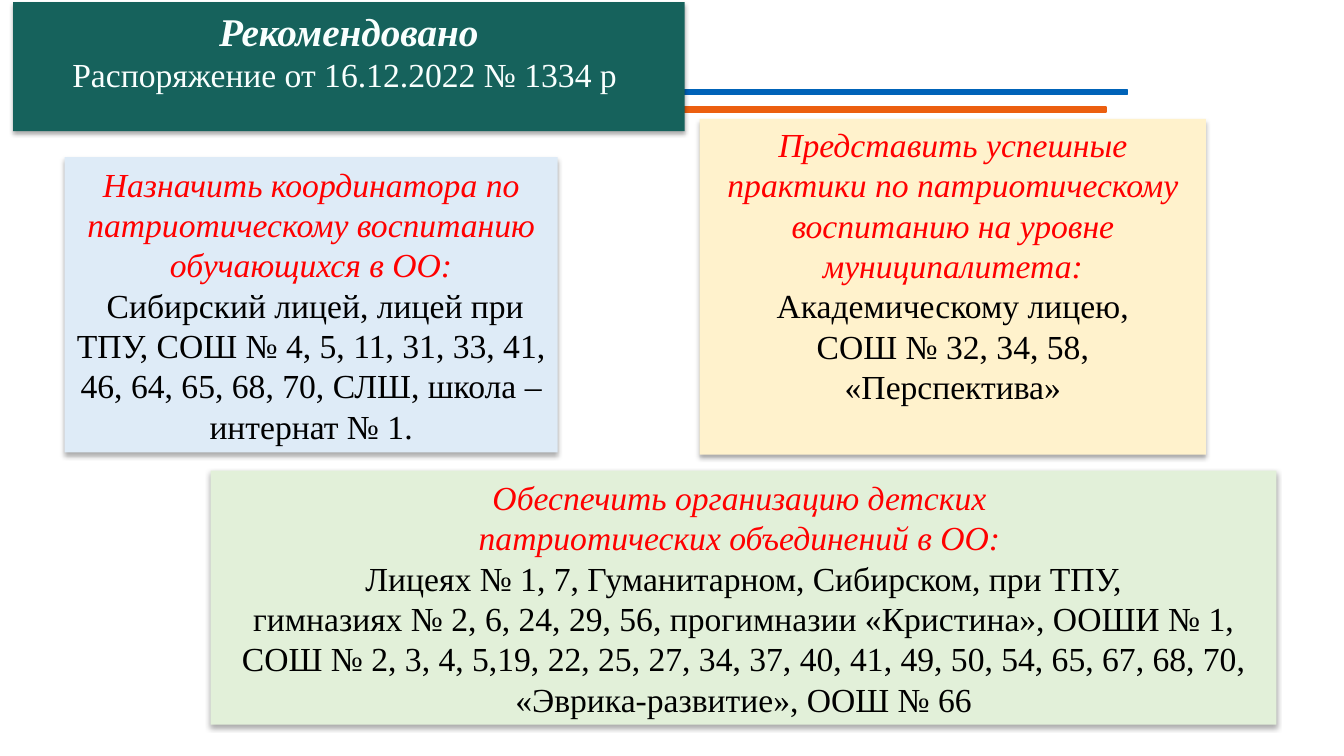
from lxml import etree
from pptx import Presentation
from pptx.dml.color import RGBColor
from pptx.enum.shapes import MSO_SHAPE
from pptx.enum.text import MSO_ANCHOR, PP_ALIGN
from pptx.oxml.ns import qn
from pptx.util import Inches, Pt

COLORS = {
    "teal": "16625C", "mint": "F9FFFE", "blue": "0063B8", "orange": "EC5F0F",
    "pale blue": "DEEBF7", "cream": "FFF2CC", "pale green": "E2F0D9",
    "red": "FF0000", "black": "000000",
}


def color(name):
    return RGBColor.from_string(COLORS[name])


def add_block(page, place, fill):
    block = page.shapes.add_shape(MSO_SHAPE.RECTANGLE, *(Inches(n) for n in place))
    block.shadow.inherit = False
    block.fill.solid()
    block.fill.fore_color.rgb = color(fill)
    block.line.fill.background()
    return block


deck = Presentation()
deck.slide_width, deck.slide_height = Inches(13.33), Inches(7.5)
page = deck.slides.add_slide(deck.slide_layouts[6])

# Stripes running out from behind the header
for place, stripe_color in [((5.5, 1.06, 5.47, 0.05), "orange"),
                            ((4.9, 0.89, 6.28, 0.05), "blue")]:
    stripe = add_block(page, place, stripe_color)
    stripe.line.color.rgb = color(stripe_color)
    stripe.line.width = Pt(1)

# Text styles: size, color, bold, italic
TITLE = (28, "mint", True, True)
SUBTITLE = (24, "mint", False, False)
TASK = (24, "red", False, True)
SCHOOLS = (24, "black", False, False)

# Cards: place, fill, side inset, anchor, paragraphs
cards = [
    ((0.64, 1.56, 4.89, 2.93), "pale blue", 0.05, MSO_ANCHOR.MIDDLE, [
        ("Назначить координатора по патриотическому воспитанию обучающихся в ОО:", TASK),
        (" Сибирский лицей, лицей при ТПУ, СОШ № 4, 5, 11, 31, 33, 41, "
         "46, 64, 65, 68, 70, СЛШ, школа – интернат № 1.", SCHOOLS),
    ]),
    ((6.94, 1.18, 5.02, 3.33), "cream", 0.05, MSO_ANCHOR.TOP, [
        ("Представить успешные практики по патриотическому воспитанию "
         "на уровне муниципалитета:", TASK),
        (" Академическому лицею, ", SCHOOLS),
        ("СОШ № 32, 34, 58, «Перспектива»", SCHOOLS),
    ]),
    ((2.09, 4.67, 10.57, 2.52), "pale green", 0.05, MSO_ANCHOR.MIDDLE, [
        ("Обеспечить организацию детских ", TASK),
        ("патриотических объединений в ОО: ", TASK),
        (" Лицеях № 1, 7, Гуманитарном, Сибирском, при ТПУ, ", SCHOOLS),
        ("гимназиях № 2, 6, 24, 29, 56, прогимназии «Кристина», ООШИ № 1, "
         "СОШ № 2, 3, 4, 5,19, 22, 25, 27, 34, 37, 40, 41, 49, 50, 54, 65, 67, 68, 70, "
         "«Эврика-развитие», ООШ № 66", SCHOOLS),
    ]),
    ((0.13, 0.02, 6.66, 1.28), "teal", 0.1, MSO_ANCHOR.TOP, [
        ("Рекомендовано", TITLE),
        ("Распоряжение от 16.12.2022 № 1334 р ", SUBTITLE),
    ]),
]

for place, fill, inset, anchor, paragraphs in cards:
    card = add_block(page, place, fill)

    # Soft shadow below the card
    effects = card._element.spPr.find(qn("a:effectLst"))
    shadow = etree.SubElement(effects, qn("a:outerShdw"), blurRad=str(Pt(3.5)),
                              dist=str(Pt(2.2)), dir="5400000", rotWithShape="0")
    shade = etree.SubElement(shadow, qn("a:srgbClr"), val=COLORS["black"])
    etree.SubElement(shade, qn("a:alpha"), val="32000")

    # Card text
    frame = card.text_frame
    frame.word_wrap = True
    frame.vertical_anchor = anchor
    frame.margin_left = frame.margin_right = Inches(inset)
    frame.margin_top = frame.margin_bottom = Inches(0.05)
    for index, (text, (size, ink, bold, italic)) in enumerate(paragraphs):
        para = frame.add_paragraph() if index else frame.paragraphs[0]
        para.text = text
        para.alignment = PP_ALIGN.CENTER
        para.font.name = "Times New Roman"
        para.font.size = Pt(size)
        para.font.bold = bold
        para.font.italic = italic
        para.font.color.rgb = color(ink)

deck.save("out.pptx")
